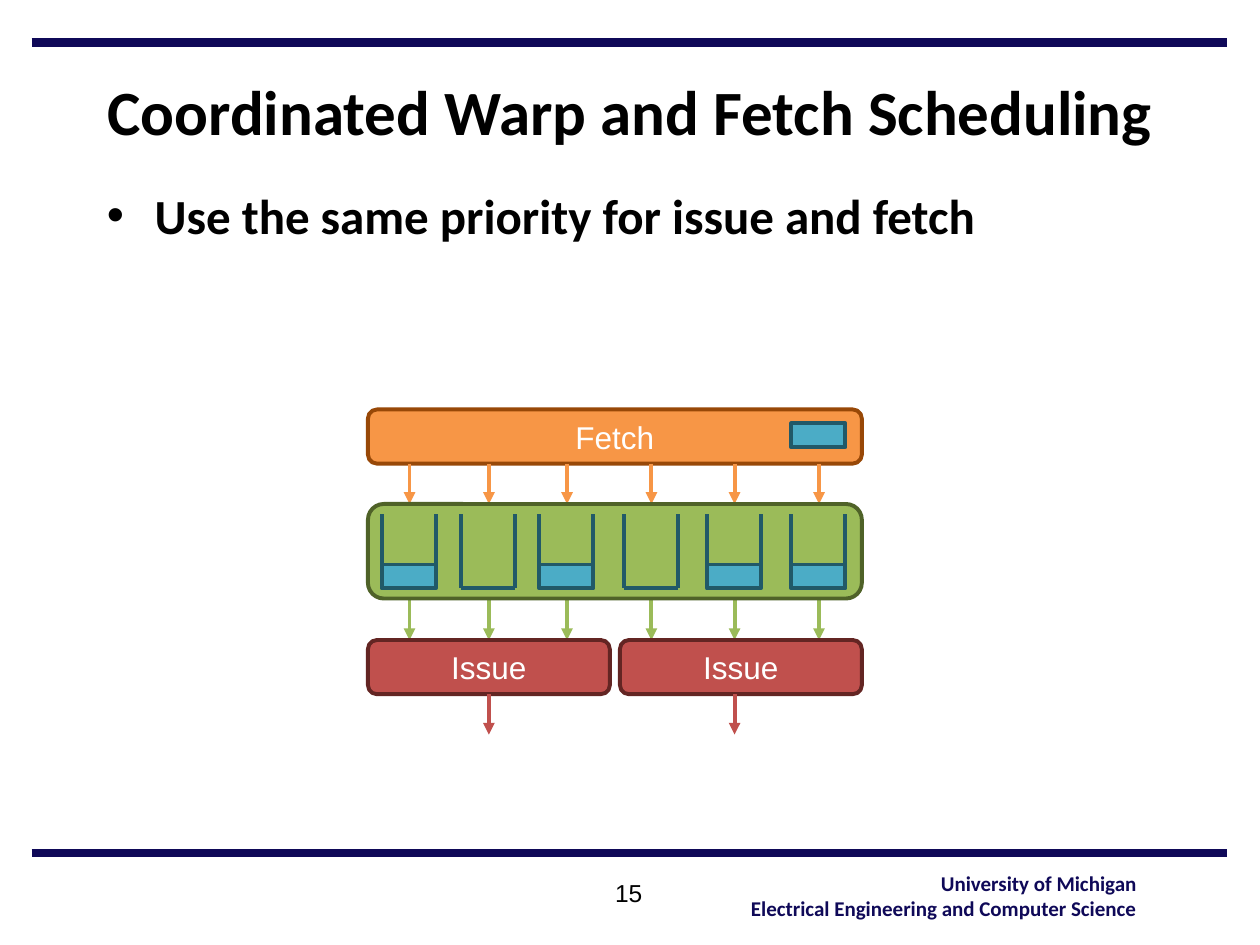
import pptx
import pptx.util
import pptx.dml.color
import pptx.enum.shapes
import pptx.enum.text
import pptx.oxml
import pptx.oxml.ns

PX = 9144  # EMU in one px, 100 px to the inch
NAVY, BLACK, WHITE = "0F0958", "000000", "FFFFFF"
ORANGE, GREEN, RED, TEAL = "F79646", "9BBB59", "C0504D", "4BACC6"
BROWN, OLIVE, MAROON, DARK = "984807", "4F6228", "632523", "215968"
LANES = (33, 96, 158, 225, 291, 358)
FILLED = (True, False, True, False, True, True)
SLOT_W, SLOT_H = 43, 19

ALIGN = pptx.enum.text.PP_ALIGN
ANCHOR = pptx.enum.text.MSO_ANCHOR
SHAPE = pptx.enum.shapes.MSO_SHAPE


def emu(*px):
    return [pptx.util.Emu(n * PX) for n in px]


def rgb(code):
    return pptx.dml.color.RGBColor.from_string(code)


def add(parent, tag, **attrs):
    node = pptx.oxml.parse_xml(f"<{tag} {pptx.oxml.ns.nsdecls('a')}/>")
    for key, val in attrs.items():
        node.set(key, val)
    parent.append(node)


def write(frame, lines, size, font, color, align, bold=False, anchor=ANCHOR.TOP, wrap=True):
    frame.word_wrap = wrap
    frame.vertical_anchor = anchor
    for i, line in enumerate(lines):
        para = frame.add_paragraph() if i else frame.paragraphs[0]
        para.alignment = align
        run = para.add_run()
        run.text = line
        run.font.size = pptx.util.Pt(size)
        run.font.name = font
        run.font.bold = bold
        run.font.color.rgb = rgb(color)


def text(slide, box, *args, **opts):
    frame = slide.shapes.add_textbox(*emu(*box)).text_frame
    write(frame, *args, **opts)
    return frame


def line(slide, start, end, color, width=2.25, arrow=False):
    kind = pptx.enum.shapes.MSO_CONNECTOR.STRAIGHT
    link = slide.shapes.add_connector(kind, *emu(*start, *end))
    link.line.color.rgb = rgb(color)
    link.line.width = pptx.util.Pt(width)
    if arrow:
        add(link.line._get_or_add_ln(), "a:tailEnd", type="triangle")
    add(link._element.spPr, "a:effectLst")


def block(slide, kind, box, fill, edge, label=None):
    form = slide.shapes.add_shape(kind, *emu(*box))
    form.shadow.inherit = False
    form.fill.solid()
    form.fill.fore_color.rgb = rgb(fill)
    form.line.color.rgb = rgb(edge)
    form.line.width = pptx.util.Pt(2.25)
    if label:
        write(form.text_frame, [label], 18, "Arial", WHITE, ALIGN.CENTER,
              anchor=ANCHOR.MIDDLE, wrap=False)


def slot(slide, left, top):
    block(slide, SHAPE.RECTANGLE, (left, top, SLOT_W, SLOT_H), TEAL, DARK)


def queue(slide, box, full):
    """Draw an open-topped buffer, with one entry at its foot if full."""
    left, top, width, height = box
    right, foot = left + width, top + height
    for x in (left, right):
        line(slide, (x, top), (x, foot), DARK)
    if full:
        slot(slide, left, foot - SLOT_H)
    else:
        line(slide, (left, foot), (right, foot), DARK)


def arrows(slide, left, top, lanes, color):
    for lane in lanes:
        line(slide, (left + lane, top), (left + lane, top + 32), color, arrow=True)


def frame(slide, box):
    left, top, width, height = box
    for y in (top, top + height):
        line(slide, (left, y), (left + width, y), NAVY, width=5)
    text(slide, (left + 557, top + 652, 330, 50),
         ["University of Michigan", "Electrical Engineering and Computer Science"],
         12, "Calibri", NAVY, ALIGN.RIGHT, bold=True, wrap=False)
    text(slide, (left + 370, top + 658, 208, 50), ["15"], 14, "Arial", BLACK, ALIGN.CENTER)


def head(slide, box):
    title = slide.shapes.title
    title.left, title.top, title.width, title.height = emu(*box)
    write(title.text_frame, ["Coordinated Warp and Fetch Scheduling"], 36, "Calibri",
          BLACK, ALIGN.CENTER, bold=True, anchor=ANCHOR.MIDDLE)
    title.text_frame.auto_size = pptx.enum.text.MSO_AUTO_SIZE.NONE


def body(slide, box):
    note = text(slide, box, ["Use the same priority for issue and fetch"],
                28, "Calibri", BLACK, ALIGN.LEFT, bold=True)
    props = note.paragraphs[0]._p.get_or_add_pPr()
    indent = 38 * PX
    props.set("marL", str(indent))
    props.set("indent", str(-indent))
    add(props, "a:buFont", typeface="Arial")
    add(props, "a:buChar", char="•")


def pipe(slide, box):
    """Draw the fetch, buffer and issue stages with the arrows between them."""
    left, top, width, height = box
    bar, tank, gap = 43, 75, 8
    hold = top + 75
    issue = top + height - 75
    half = (width - gap) // 2

    block(slide, SHAPE.ROUNDED_RECTANGLE, (left, top, width, bar), ORANGE, BROWN, "Fetch")
    slot(slide, left + LANES[-1] - 22, top + 11)
    arrows(slide, left, top + bar, LANES, ORANGE)

    arrows(slide, left, hold + tank + 1, LANES, GREEN)
    block(slide, SHAPE.ROUNDED_RECTANGLE, (left, hold, width, tank), GREEN, OLIVE)
    for lane, full in zip(LANES, FILLED):
        queue(slide, (left + lane - 22, hold + 8, SLOT_W, 59), full)

    for x in (left, left + half + gap):
        block(slide, SHAPE.ROUNDED_RECTANGLE, (x, issue, half, bar), RED, MAROON, "Issue")
    arrows(slide, left, issue + bar, LANES[1::3], RED)


def main():
    deck = pptx.Presentation()
    deck.slide_width, deck.slide_height = emu(1000, 750)
    slide = deck.slides.add_slide(deck.slide_layouts[5])
    frame(slide, (25, 34, 949, 643))
    head(slide, (25, 42, 950, 91))
    body(slide, (75, 142, 850, 75))
    pipe(slide, (292, 325, 392, 258))
    deck.save("out.pptx")


if __name__ == "__main__":
    main()
